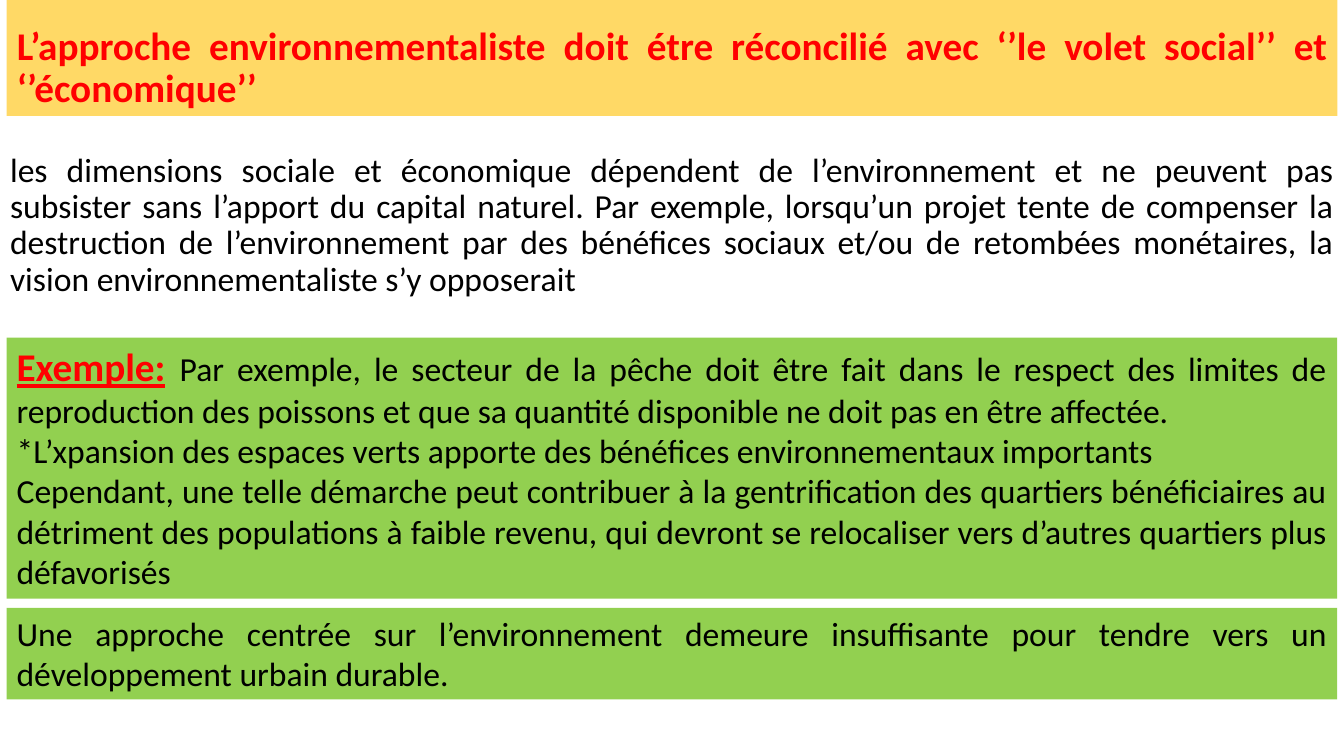
from pptx import Presentation
from pptx.dml.color import RGBColor
from pptx.enum.text import MSO_ANCHOR, MSO_AUTO_SIZE, PP_ALIGN
from pptx.util import Inches, Pt

RED = RGBColor(0xFF, 0x00, 0x00)
BLACK = RGBColor(0x00, 0x00, 0x00)
GOLD = RGBColor(0xFF, 0xD9, 0x66)
GREEN = RGBColor(0x92, 0xD0, 0x50)


class Deck:
    font = "Calibri"
    cols, rows = 200, 150
    large, small = 28, 24

    def __init__(self):
        self.prs = Presentation()
        self.prs.slide_width = Inches(13.33)
        self.prs.slide_height = Inches(7.5)
        self.slide = self.prs.slides.add_slide(self.prs.slide_layouts[0])

    def grid(self, left, top, width, height):
        col = self.prs.slide_width / self.cols
        row = self.prs.slide_height / self.rows
        return [int(n) for n in (left * col, top * row, width * col, height * row)]

    def place(self, shape, cell):
        shape.left, shape.top, shape.width, shape.height = self.grid(*cell)

    def paint(self, shape, color):
        shape.fill.solid()
        shape.fill.fore_color.rgb = color

    def add_run(self, para, text, size=small, color=BLACK, bold=False, under=False):
        run = para.add_run()
        run.text = text
        font = run.font
        font.name, font.size = self.font, Pt(size)
        font.bold, font.underline = bold, under
        font.color.rgb = color

    def set_text(self, shape, paras, fit, anchor=MSO_ANCHOR.TOP, line=1.0, before=0):
        frame = shape.text_frame
        frame.word_wrap = True
        frame.auto_size = fit
        frame.vertical_anchor = anchor
        for i, runs in enumerate(paras):
            para = frame.add_paragraph() if i else frame.paragraphs[0]
            para.alignment = PP_ALIGN.JUSTIFY
            para.line_spacing = line
            para.space_before = Pt(before)
            for text, *style in runs:
                self.add_run(para, text, *style)

    def title(self, cell, text):
        shape = self.slide.shapes.title
        self.place(shape, cell)
        self.paint(shape, GOLD)
        runs = [(text, self.large, RED, True)]
        self.set_text(shape, [runs], MSO_AUTO_SIZE.NONE, MSO_ANCHOR.BOTTOM, 0.9)

    def body(self, cell, text):
        shape = self.slide.placeholders[1]
        self.place(shape, cell)
        self.set_text(shape, [[(text,)]], MSO_AUTO_SIZE.NONE, line=0.9, before=10)

    def panel(self, cell, paras):
        shape = self.slide.shapes.add_textbox(*self.grid(*cell))
        self.paint(shape, GREEN)
        self.set_text(shape, paras, MSO_AUTO_SIZE.SHAPE_TO_FIT_TEXT)


def main():
    deck = Deck()
    deck.title(
        (1, 0, 198, 23),
        "L’approche environnementaliste doit étre réconcilié avec "
        "‘’le volet social’’ et ‘’économique’’",
    )
    deck.body(
        (0, 29.4, 200, 33),
        "les dimensions sociale et économique dépendent de l’environnement et ne "
        "peuvent pas subsister sans l’apport du capital naturel. Par exemple, "
        "lorsqu’un projet tente de compenser la destruction de l’environnement par "
        "des bénéfices sociaux et/ou de retombées monétaires, la vision "
        "environnementaliste s’y opposerait",
    )
    deck.panel(
        (1, 120.6, 198, 18.2),
        [[("Une approche centrée sur l’environnement demeure insuffisante pour "
           "tendre vers un développement urbain durable.",)]],
    )
    deck.panel(
        (1, 67, 198, 51.8),
        [
            [
                ("Exemple:", deck.large, RED, True, True),
                (" ", deck.large, RED, True),
                ("Par exemple, le secteur de la pêche doit être fait dans le respect "
                 "des limites de reproduction des poissons et que sa quantité "
                 "disponible ne doit pas en être affectée.",),
            ],
            [("*L’xpansion des espaces verts apporte des bénéfices "
              "environnementaux importants",)],
            [("Cependant, une telle démarche peut contribuer à la gentrification des "
              "quartiers bénéficiaires au détriment des populations à faible revenu, "
              "qui devront se relocaliser vers d’autres quartiers plus défavorisés",)],
        ],
    )
    deck.prs.save("out.pptx")


if __name__ == "__main__":
    main()
